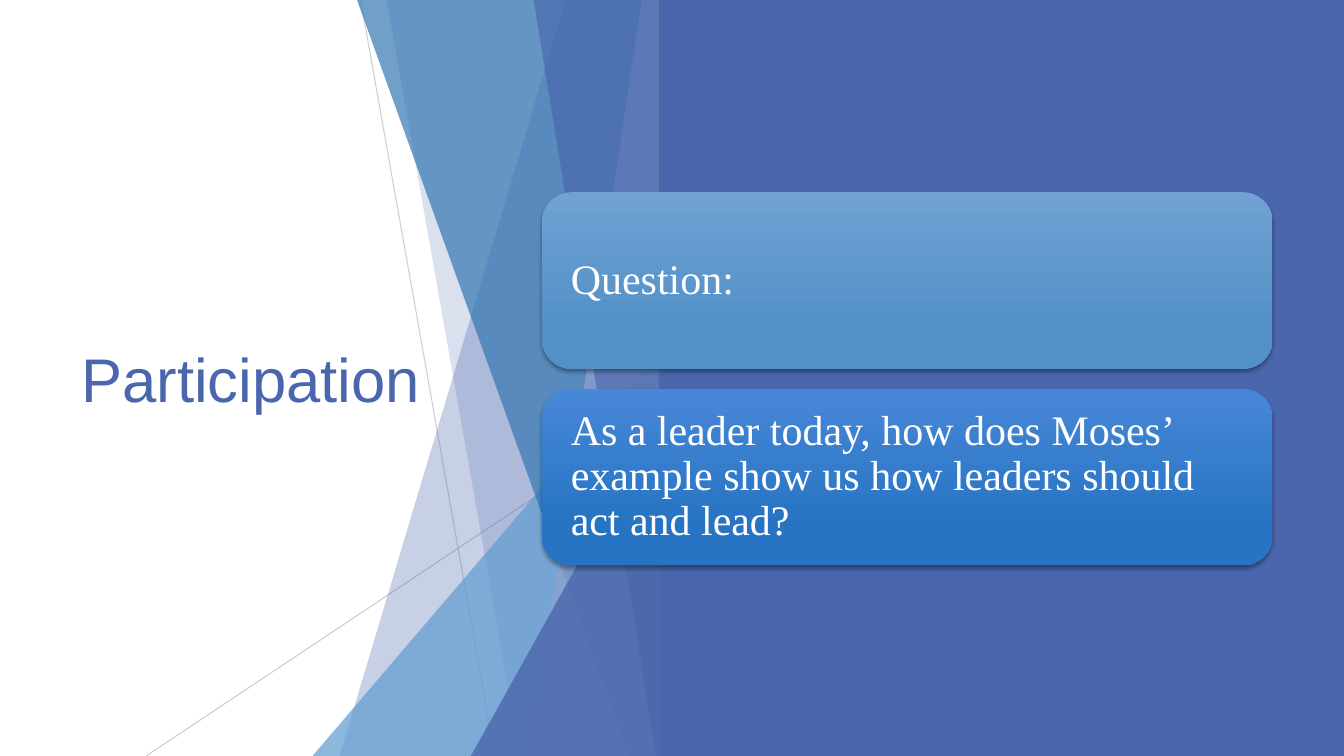
from lxml.etree import SubElement
from pptx import Presentation
from pptx.dml.color import RGBColor
from pptx.enum.shapes import MSO_CONNECTOR, MSO_SHAPE
from pptx.enum.text import MSO_ANCHOR, PP_ALIGN
from pptx.oxml.ns import qn
from pptx.util import Pt

BLUE, SKY, DEEP, PALE = "4A66AC", "629DD1", "3477B2", "90A2CF"
WHITE, GREY = "FFFFFF", "BFBFBF"


def tint(color, code, alpha=100):
    color.rgb = RGBColor.from_string(code)
    if alpha < 100:
        node = color._xFill.find(qn("a:srgbClr"))
        SubElement(node, qn("a:alpha"), val=str(alpha * 1000))


def paint(shape, code, alpha=100):
    shape.shadow.inherit = False
    shape.line.fill.background()
    shape.fill.solid()
    tint(shape.fill.fore_color, code, alpha)


def write(shape, words, font, size, code, inset):
    frame = shape.text_frame
    frame.text = words
    frame.word_wrap = True
    frame.vertical_anchor = MSO_ANCHOR.MIDDLE
    frame.margin_left = frame.margin_right = Pt(inset)
    part = frame.paragraphs[0]
    part.alignment = PP_ALIGN.LEFT
    part.font.name = font
    part.font.size = Pt(size)
    tint(part.font.color, code)
    return part


def add_ray(shapes, x1, y1, x2, y2, alpha):
    ray = shapes.add_connector(
        MSO_CONNECTOR.STRAIGHT, Pt(x1), Pt(y1), Pt(x2), Pt(y2))
    ray.line.width = Pt(0.75)
    ray.line.fill.solid()
    tint(ray.line.fill.fore_color, GREY, alpha)
    SubElement(ray._element.spPr, qn("a:effectLst"))


def add_facet(shapes, right, top, base, high, low, code, alpha):
    pen = shapes.build_freeform(Pt(right - high), Pt(top))
    pen.add_line_segments(
        [(Pt(right), Pt(top)), (Pt(right), Pt(base)), (Pt(right - low), Pt(base))])
    paint(pen.convert_to_shape(), code, alpha)


def add_wedge(shapes, right, base, width, height, code, alpha):
    wedge = shapes.add_shape(
        MSO_SHAPE.ISOSCELES_TRIANGLE,
        Pt(right - width), Pt(base - height), Pt(width), Pt(height))
    wedge.adjustments[0] = 1
    paint(wedge, code, alpha)


def add_fan(shapes, left, top, width, height):
    right, base = left + width, top + height
    add_ray(shapes, right - 222, top, right - 126, base, 75)
    add_ray(shapes, right, base - 249.8, left, base, 80)
    for high, low, code, alpha in [(75.6, 237, BLUE, 30), (203.4, 108, BLUE, 20)]:
        add_facet(shapes, right, top, base, high, low, code, alpha)
    add_wedge(shapes, right, base, 256.4, 300, SKY, 72)
    for high, low, code, alpha in [
            (224.6, 30.4, DEEP, 70), (21.2, 101.6, PALE, 70), (98.4, 10.8, BLUE, 65)]:
        add_facet(shapes, right, top, base, high, low, code, alpha)
    add_wedge(shapes, right, base, 143.2, 257, BLUE, 80)


def add_title(shapes, left, top, width, height, words):
    title = shapes.add_textbox(Pt(left), Pt(top), Pt(width), Pt(height))
    write(title, words, "Arial", 44, BLUE, 7.2)


def add_panel(shapes, left, top, width, height):
    panel = shapes.add_shape(
        MSO_SHAPE.RECTANGLE, Pt(left), Pt(top), Pt(width), Pt(height))
    paint(panel, BLUE)


def add_card(shapes, left, top, width, height, words, shades):
    card = shapes.add_shape(
        MSO_SHAPE.ROUNDED_RECTANGLE, Pt(left), Pt(top), Pt(width), Pt(height))
    card.line.fill.background()
    card.fill.gradient()
    card.fill.gradient_angle = 270
    for stop, code, place in zip(card.fill.gradient_stops, shades, (0, 0.78)):
        tint(stop.color, code)
        stop.position = place
    card.shadow.inherit = False
    glow = SubElement(
        card._element.spPr.find(qn("a:effectLst")), qn("a:outerShdw"),
        blurRad=str(Pt(3)), dist=str(Pt(2)), dir="5400000", rotWithShape="0")
    black = SubElement(glow, qn("a:srgbClr"), val="000000")
    SubElement(black, qn("a:alpha"), val="35000")
    part = write(card, words, "Times New Roman", 30, WHITE, 14.4)
    part.line_spacing = 0.9


def add_cards(shapes, left, top, width, height, cards, gap=14.4):
    tall = (height - gap * (len(cards) - 1)) / len(cards)
    for row, (words, shades) in enumerate(cards):
        add_card(shapes, left, top + row * (tall + gap), width, tall, words, shades)


def main():
    deck = Presentation()
    deck.slide_width, deck.slide_height = Pt(960), Pt(540)
    shapes = deck.slides.add_slide(deck.slide_layouts[6]).shapes
    add_title(shapes, 51, 109, 279.4, 322.4, "Participation")
    add_fan(shapes, 104.4, 0, 375.2, 540)
    add_panel(shapes, 470.6, 0, 489.4, 540)
    add_cards(shapes, 387.2, 137.3, 521.8, 266.4, [
        ("Question:", ("6FA2D3", "5290C7")),
        ("As a leader today, how does Moses’ example show us how leaders "
         "should act and lead?", ("4887D7", "2674C3")),
    ])
    deck.save("out.pptx")


if __name__ == "__main__":
    main()
